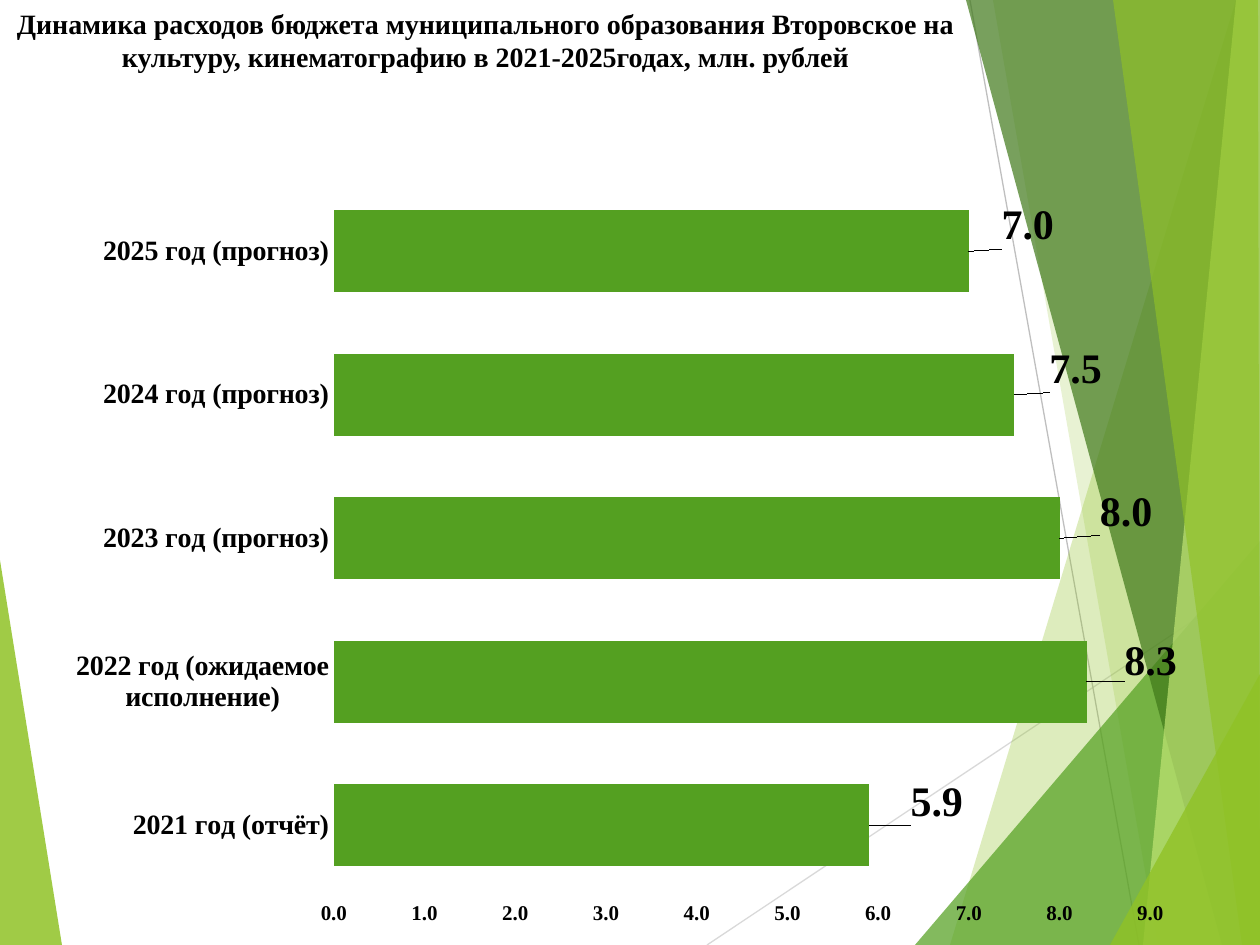
from lxml import etree
from pptx import Presentation
from pptx.chart.data import CategoryChartData
from pptx.dml.color import RGBColor
from pptx.enum.chart import XL_CHART_TYPE, XL_LABEL_POSITION, XL_TICK_MARK
from pptx.enum.shapes import MSO_CONNECTOR
from pptx.enum.text import MSO_ANCHOR, PP_ALIGN
from pptx.oxml.ns import qn
from pptx.util import Pt

BAR = XL_CHART_TYPE.BAR_CLUSTERED
OUT = XL_LABEL_POSITION.OUTSIDE_END
NO_TICK = XL_TICK_MARK.NONE
STRAIGHT = MSO_CONNECTOR.STRAIGHT
TOP = MSO_ANCHOR.TOP
CENTER = PP_ALIGN.CENTER
WIDE, HIGH = 1260, 945
SCALE = 9144000 / WIDE
FONT = "Times New Roman"
BLACK, LIME, GREEN = "000000", "90C226", "54A021"
TITLE = ("Динамика расходов бюджета муниципального образования Второвское на "
         "культуру, кинематографию в 2021-2025годах, млн. рублей")
CHART_BOX = (0, 160, WIDE, 785)
PLOT = {"x": 0.265, "y": 0.025, "w": 0.648, "h": 0.914}
LINES = [((707, 945), (1260, 576), "D9D9D9"), ((970, 0), (1139, 945), "BFBFBF")]
FACETS = [
    ([(0, 560), (62, 945), (0, 945)], LIME, 85),
    ([(1236, 0), (950, 945), (1260, 945), (1260, 0)], LIME, 30),
    ([(993, 0), (1158, 945), (1260, 945), (1260, 0)], LIME, 20),
    ([(915, 945), (1260, 541), (1260, 945)], GREEN, 72),
    ([(966, 0), (1222, 945), (1260, 945), (1260, 0)], "3F7819", 70),
    ([(1236, 0), (1143, 945), (1260, 945), (1260, 0)], "C0E474", 70),
    ([(1113, 0), (1242, 945), (1260, 945), (1258, 0)], LIME, 65),
    ([(1110, 945), (1260, 674), (1260, 945)], LIME, 80),
]
ROWS = [
    ("2021 год (отчёт)", 5.9, (37, -23)),
    ("2022 год (ожидаемое исполнение)", 8.3, (33, -21)),
    ("2023 год (прогноз)", 8.0, (35, -27)),
    ("2024 год (прогноз)", 7.5, (30, -26)),
    ("2025 год (прогноз)", 7.0, (28, -26)),
]


def px(num):
    """Turn pixels into EMU."""
    return round(num * SCALE)


def color(code):
    """Turn a hex string into a colour."""
    return RGBColor.from_string(code)


def style(font, size):
    """Set the bold black face at a size."""
    font.name, font.size, font.bold = FONT, Pt(size), True
    font.color.rgb = color(BLACK)


def add_line(slide, start, end, code):
    """Draw a thin line without a shadow."""
    line = slide.shapes.add_connector(STRAIGHT, *map(px, start + end))
    line.line.color.rgb = color(code)
    line.line.width = Pt(0.75)
    etree.SubElement(line.element.spPr, qn("a:effectLst"))


def add_facet(slide, points, code, alpha):
    """Draw a see-through polygon."""
    build = slide.shapes.build_freeform(*points[0], scale=SCALE)
    build.add_line_segments(points[1:], close=True)
    facet = build.convert_to_shape()
    facet.shadow.inherit = False
    facet.line.fill.background()
    facet.fill.solid()
    facet.fill.fore_color.rgb = color(code)
    tint = facet.element.spPr.find(".//" + qn("a:srgbClr"))
    etree.SubElement(tint, qn("a:alpha"), val=str(alpha * 1000))


def set_title(slide):
    """Place and format the title in front of the facets."""
    title = slide.shapes.title
    title.element.getparent().append(title.element)
    title.left, title.top, title.width, title.height = map(px, (0, 0, 971, 137))
    frame = title.text_frame
    frame.text = TITLE
    frame.vertical_anchor = TOP
    frame.word_wrap = True
    para = frame.paragraphs[0]
    para.alignment = CENTER
    style(para.font, 16)


def make_layout(parts):
    """Build a manual chart layout from name and value pairs."""
    layout = etree.Element(qn("c:layout"))
    manual = etree.SubElement(layout, qn("c:manualLayout"))
    for name, value in parts:
        etree.SubElement(manual, qn("c:" + name), val=str(value))
    return layout


def set_plot(chart):
    """Fix the inner plot area."""
    area = chart.element.find(".//" + qn("c:plotArea"))
    for old in area.findall(qn("c:layout")):
        area.remove(old)
    modes = [("layoutTarget", "inner"), ("xMode", "edge"), ("yMode", "edge")]
    area.insert(0, make_layout(modes + list(PLOT.items())))


def set_axis(axis, size):
    """Leave only the labels of an axis."""
    axis.has_major_gridlines = False
    axis.major_tick_mark = axis.minor_tick_mark = NO_TICK
    axis.format.line.fill.background()
    style(axis.tick_labels.font, size)


def set_label(series, index, shift):
    """Show a point's value, moved from the bar's end."""
    label = series.points[index].data_label
    style(label.font, 24)
    label.position = OUT
    node = series.data_labels._element.findall(qn("c:dLbl"))[index]
    spot = node.find(qn("c:idx"))
    form = etree.Element(qn("c:numFmt"), formatCode="0.0", sourceLinked="0")
    spot.addnext(form)
    parts = [("x", round(shift[0] / CHART_BOX[2], 3)),
             ("y", round(shift[1] / CHART_BOX[3], 3))]
    spot.addnext(make_layout(parts))


def add_bars(slide):
    """Add the bar chart of spending by year."""
    data = CategoryChartData(number_format="0.0")
    data.categories = [name for name, _, _ in ROWS]
    data.add_series("Series 1", [value for _, value, _ in ROWS])
    chart = slide.shapes.add_chart(BAR, *map(px, CHART_BOX), data).chart
    chart.has_title = chart.has_legend = False
    chart.font.name, chart.font.size = "Karla", Pt(10)
    chart.font.color.rgb = color(BLACK)
    set_plot(chart)
    set_axis(chart.category_axis, 16)
    axis = chart.value_axis
    set_axis(axis, 12)
    axis.minimum_scale, axis.maximum_scale, axis.major_unit = 0, 9, 1
    axis.tick_labels.number_format = "0.0"
    axis.tick_labels.number_format_is_linked = False
    plot = chart.plots[0]
    plot.gap_width = 75
    plot.vary_by_categories = False
    series = plot.series[0]
    series.format.fill.solid()
    series.format.fill.fore_color.rgb = color(GREEN)
    for index, (_, _, shift) in enumerate(ROWS):
        set_label(series, index, shift)


def main():
    """Build and save the slide."""
    deck = Presentation()
    deck.slide_width, deck.slide_height = px(WIDE), px(HIGH)
    slide = deck.slides.add_slide(deck.slide_layouts[5])
    add_facet(slide, *FACETS[0])
    for line in LINES:
        add_line(slide, *line)
    for facet in FACETS[1:]:
        add_facet(slide, *facet)
    set_title(slide)
    add_bars(slide)
    deck.save("out.pptx")


if __name__ == "__main__":
    main()
